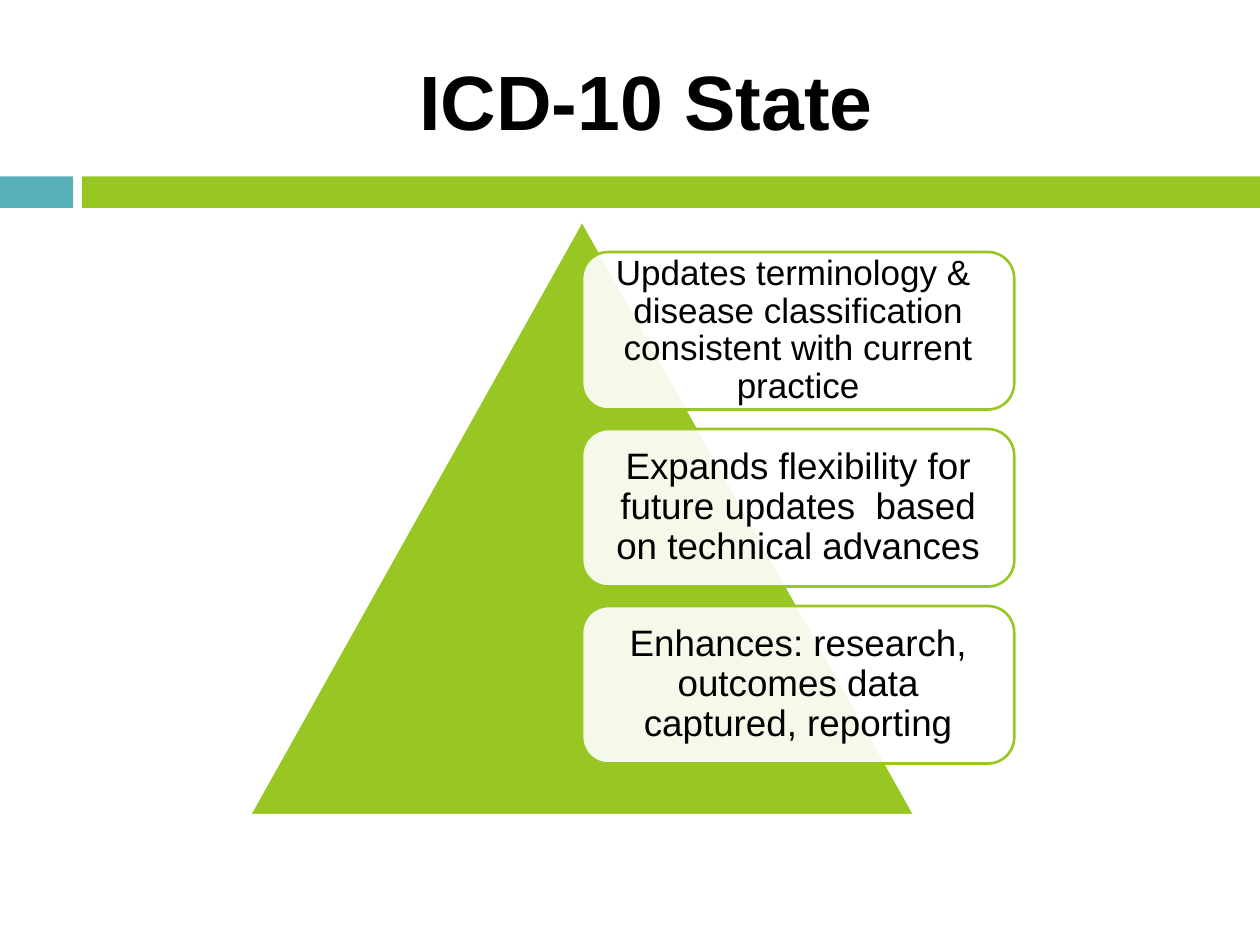
from lxml import etree
from pptx import Presentation
from pptx.dml.color import RGBColor
from pptx.enum import shapes, text
from pptx.oxml import ns
from pptx.util import Inches, Pt

TITLE = "ICD-10 State"
# wording, text size, inset
BENEFITS = [
    ("Updates terminology &  disease classification consistent with current practice", 20, 0.08),
    ("Expands flexibility for future updates  based on technical advances", 21, 0.09),
    ("Enhances: research, outcomes data captured, reporting", 21, 0.09),
]
GREEN, TEAL, WHITE, BLACK = "98C723", "59B0B9", "FFFFFF", "000000"
BARS = [(0, 0.58, TEAL), (0.65, 9.35, GREEN)]  # left, width, colour
CARD_LEFT, CARD_TOP, CARD_WIDTH, CARD_HEIGHT = 4.62, 2, 3.43, 1.25
CARD_PITCH = 1.405


def paint(color_format, color):
    color_format.rgb = RGBColor.from_string(color)


def add_block(page, kind, left, top, width, height, fill, line=None):
    block = page.shapes.add_shape(
        kind, Inches(left), Inches(top), Inches(width), Inches(height))
    block.shadow.inherit = False
    block.fill.solid()
    paint(block.fill.fore_color, fill)
    if line:
        paint(block.line.color, line)
        block.line.width = Pt(1.5)
    else:
        block.line.fill.background()
    return block


def set_opacity(block, percent):
    color = block.fill._xPr.find(".//" + ns.qn("a:srgbClr"))
    etree.SubElement(color, ns.qn("a:alpha"), val=str(percent * 1000))


def write(box, words, size, inset, bold=False):
    frame = box.text_frame
    frame.word_wrap = True
    frame.auto_size = text.MSO_AUTO_SIZE.NONE
    frame.vertical_anchor = text.MSO_ANCHOR.MIDDLE
    frame.margin_left = frame.margin_right = Inches(inset)
    frame.margin_top = frame.margin_bottom = Inches(inset)
    para = frame.paragraphs[0]
    para.alignment = text.PP_ALIGN.CENTER
    span = para.add_run()
    span.text = words
    span.font.name = "Arial"
    span.font.size = Pt(size)
    span.font.bold = bold
    paint(span.font.color, BLACK)
    return para


deck = Presentation()
deck.slide_width, deck.slide_height = Inches(10), Inches(7.5)
page = deck.slides.add_slide(deck.slide_layouts[5])

for left, width, color in BARS:
    add_block(page, shapes.MSO_SHAPE.RECTANGLE, left, 1.4, width, 0.25, color)

title = page.shapes.title
title.left, title.top = Inches(0.67), Inches(0.25)
title.width, title.height = Inches(8.92), Inches(1.08)
write(title, TITLE, 44, 0.05, bold=True)

add_block(page, shapes.MSO_SHAPE.ISOSCELES_TRIANGLE, 1.98, 1.75, 5.28, 4.72, GREEN, WHITE)

for index, (words, size, inset) in enumerate(BENEFITS):
    card = add_block(page, shapes.MSO_SHAPE.ROUNDED_RECTANGLE,
                     CARD_LEFT, CARD_TOP + index * CARD_PITCH,
                     CARD_WIDTH, CARD_HEIGHT, WHITE, GREEN)
    set_opacity(card, 90)
    write(card, words, size, inset).line_spacing = 0.9

deck.save("out.pptx")
